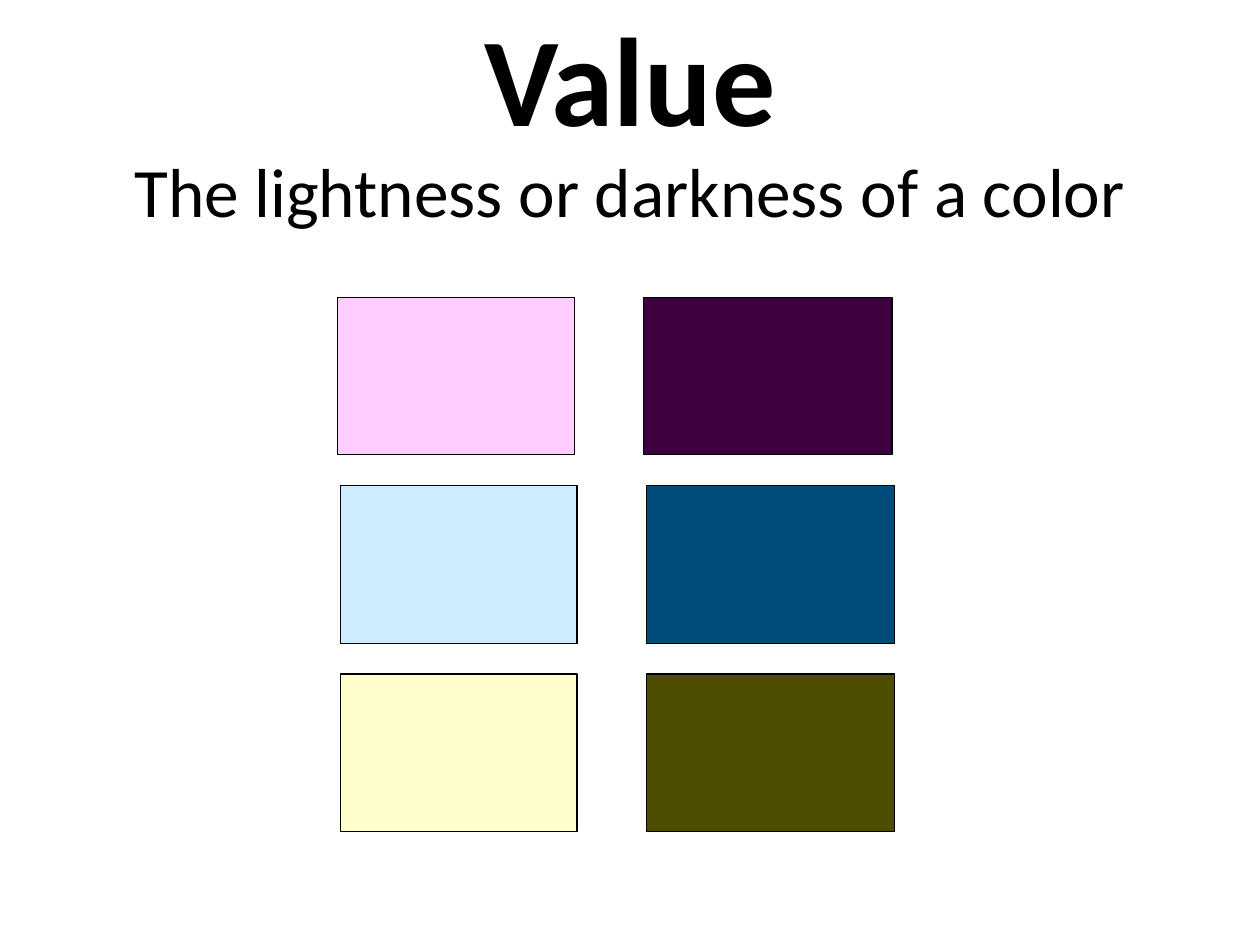
from pptx import Presentation
from pptx.dml.color import RGBColor as RGB
from pptx.enum.shapes import MSO_SHAPE as Shape
from pptx.enum.text import MSO_ANCHOR as Anchor, PP_ALIGN as Align
from pptx.util import Inches, Pt

HUES = {
    "ink": "000000",
    "pink": "FFCCFF",
    "plum": "3E003E",
    "sky": "CCECFF",
    "navy": "004C7A",
    "cream": "FFFFCC",
    "olive": "4E4C00",
}
PAIRS = [("pink", "plum"), ("sky", "navy"), ("cream", "olive")]


def add_text(para, text, size, bold=False, hue="ink", face="Calibri"):
    run = para.add_run()
    run.text = text
    font = run.font
    font.name, font.size, font.bold = face, Pt(size), bold
    font.color.rgb = RGB.from_string(HUES[hue])


def add_title(slide, left, top, width, height):
    box = slide.shapes.add_textbox(
        Inches(left), Inches(top), Inches(width), Inches(height))
    frame = box.text_frame
    frame.word_wrap = True
    frame.vertical_anchor = Anchor.MIDDLE
    frame.margin_top = Inches(0.15)
    para = frame.paragraphs[0]
    para.alignment = Align.CENTER
    para.line_spacing = 0.94
    add_text(para, "Value", size=72, bold=True)
    para.add_line_break()
    add_text(para, "The lightness or darkness of a color", size=39.6)


def add_swatch(slide, left, top, width, height, hue):
    rect = slide.shapes.add_shape(
        Shape.RECTANGLE, Inches(left), Inches(top), Inches(width), Inches(height))
    rect.shadow.inherit = False
    rect.fill.solid()
    rect.fill.fore_color.rgb = RGB.from_string(HUES[hue])
    rect.line.color.rgb = RGB.from_string(HUES["ink"])
    rect.line.width = Pt(0.75)


def add_grid(slide, left, top, width, height):
    tall = 1.25
    light, dark = 1.88, 1.97
    step = (height - tall) / (len(PAIRS) - 1)
    for row, (pale, deep) in enumerate(PAIRS):
        shift = 0.02 if row else 0
        y = top + row * step
        add_swatch(slide, left + shift, y, light, tall, pale)
        add_swatch(slide, left + width - dark + shift, y, dark, tall, deep)


def main():
    deck = Presentation()
    deck.slide_width, deck.slide_height = Inches(10), Inches(7.5)
    slide = deck.slides.add_slide(deck.slide_layouts[6])
    add_title(slide, 0.5, 0.3, 9, 1.25)
    add_grid(slide, 2.68, 2.36, 4.4, 4.24)
    deck.save("out.pptx")


if __name__ == "__main__":
    main()
